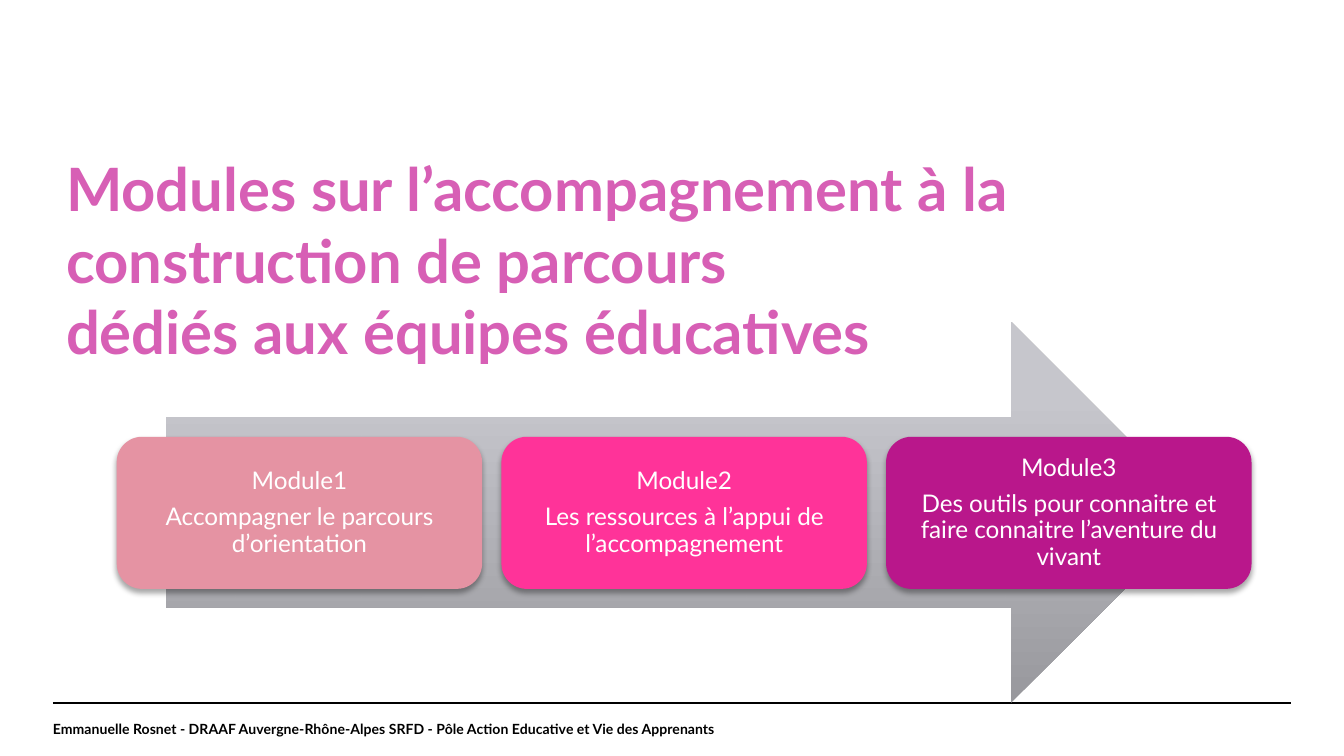
from copy import deepcopy

from lxml.etree import SubElement
from pptx import Presentation
from pptx.dml.color import RGBColor
from pptx.enum.shapes import MSO_CONNECTOR, MSO_SHAPE
from pptx.enum.text import MSO_ANCHOR, PP_ALIGN
from pptx.oxml.ns import qn
from pptx.util import Pt

COLOURS = {
    "title": "D75FB5",
    "white": "FFFFFF",
    "black": "000000",
    "arrow_dark": "98989D",
    "arrow_mid": "C6C6CC",
    "arrow_light": "C7C7CD",
    "module_1": "E593A3",
    "module_2": "FF3399",
    "module_3": "B9178B",
}
FONT = "Lato"
TITLE = [
    "Modules sur l’accompagnement à la construction de parcours",
    "dédiés aux équipes éducatives",
]
MODULES = [
    ("module_1", "Module1", "Accompagner le parcours d’orientation"),
    ("module_2", "Module2", "Les ressources à l’appui de l’accompagnement"),
    ("module_3", "Module3",
     "Des outils pour connaitre et faire connaitre l’aventure du vivant"),
]
FOOTER = ("Emmanuelle Rosnet - DRAAF Auvergne-Rhône-Alpes SRFD - "
          "Pôle Action Educative et Vie des Apprenants")


def colour(name):
    """Return the named colour."""
    return RGBColor.from_string(COLOURS[name])


def points(*lengths):
    """Turn plain numbers into point lengths."""
    return [Pt(length) for length in lengths]


def add_block(page, kind, box, fill):
    """Add a plain preset shape with a solid fill and no outline or shadow."""
    shape = page.shapes.add_shape(kind, *points(*box))
    shape.shadow.inherit = False
    shape.fill.solid()
    shape.fill.fore_color.rgb = colour(fill)
    shape.line.fill.background()
    return shape


def write(frame, lines, size, ink, bold=False, align=PP_ALIGN.LEFT,
          anchor=MSO_ANCHOR.TOP, margins=(7.2, 3.6)):
    """Fill a text frame with one paragraph per line."""
    frame.word_wrap = True
    frame.vertical_anchor = anchor
    frame.margin_left = frame.margin_right = Pt(margins[0])
    frame.margin_top = frame.margin_bottom = Pt(margins[1])
    for index, line in enumerate(lines):
        para = frame.add_paragraph() if index else frame.paragraphs[0]
        para.alignment = align
        span = para.add_run()
        span.text = line
        span.font.name = FONT
        span.font.size = Pt(size)
        span.font.bold = bold
        span.font.color.rgb = colour(ink)


def add_soft_shadow(shape):
    """Give a shape a soft shadow falling straight down."""
    effects = shape._element.spPr.find(qn("a:effectLst"))
    shadow = SubElement(effects, qn("a:outerShdw"), blurRad=str(Pt(3.1)),
                        dist=str(Pt(1.8)), dir="5400000", rotWithShape="0")
    tint = SubElement(shadow, qn("a:srgbClr"), val=COLOURS["black"])
    SubElement(tint, qn("a:alpha"), val="35000")


def add_title(page, box):
    """Place the title block."""
    block = add_block(page, MSO_SHAPE.RECTANGLE, box, "white")
    block.line.color.rgb = colour("white")
    block.line.width = Pt(2)
    write(block.text_frame, TITLE, 32, "title", bold=True)


def add_arrow(page, box):
    """Place the wide arrow, shaded from dark at the bottom to light."""
    arrow = add_block(page, MSO_SHAPE.RIGHT_ARROW, box, "arrow_mid")
    arrow.fill.gradient()
    arrow.fill.gradient_angle = 90
    stop_list = arrow._element.spPr.find(qn("a:gradFill")).find(qn("a:gsLst"))
    stop_list.append(deepcopy(stop_list[-1]))
    shades = [(0, "arrow_dark"), (0.8, "arrow_mid"), (1, "arrow_light")]
    for stop, (position, shade) in zip(arrow.fill.gradient_stops, shades):
        stop.position = position
        stop.color.rgb = colour(shade)


def add_modules(page, box, gap):
    """Place the module cards side by side across the box."""
    left, top, width, height = box
    card_width = (width - gap * (len(MODULES) - 1)) / len(MODULES)
    for index, (fill, name, topic) in enumerate(MODULES):
        card_left = left + index * (card_width + gap)
        card = add_block(page, MSO_SHAPE.ROUNDED_RECTANGLE,
                         (card_left, top, card_width, height), fill)
        add_soft_shadow(card)
        write(card.text_frame, [name, topic], 13, "white",
              align=PP_ALIGN.CENTER, anchor=MSO_ANCHOR.MIDDLE,
              margins=(3.9, 3.9))
        for para in card.text_frame.paragraphs:
            para.line_spacing = 0.9
        card.text_frame.paragraphs[0].space_after = Pt(5.5)


def add_footer(page, box, rule_width):
    """Place the footer text under its rule."""
    left, top = box[:2]
    rule = page.shapes.add_connector(
        MSO_CONNECTOR.STRAIGHT, *points(left, top, left + rule_width, top))
    rule.line.color.rgb = colour("black")
    rule.line.width = Pt(0.8)
    SubElement(rule._element.spPr, qn("a:effectLst"))
    label = page.shapes.add_textbox(*points(*box))
    write(label.text_frame, [FOOTER], 7.5, "black", bold=True,
          anchor=MSO_ANCHOR.MIDDLE, margins=(0, 0))


def main():
    """Build the slide and save it."""
    deck = Presentation()
    deck.slide_width, deck.slide_height = points(720, 405)
    page = deck.slides.add_slide(deck.slide_layouts[6])
    add_footer(page, (28.35, 376.6, 465, 28.35), 663.3)
    add_title(page, (28.35, 77.8, 667.4, 123.8))
    add_arrow(page, (89, 172.5, 554.7, 204))
    add_modules(page, (62.5, 234, 608, 81.5), 10.3)
    deck.save("out.pptx")


if __name__ == "__main__":
    main()
